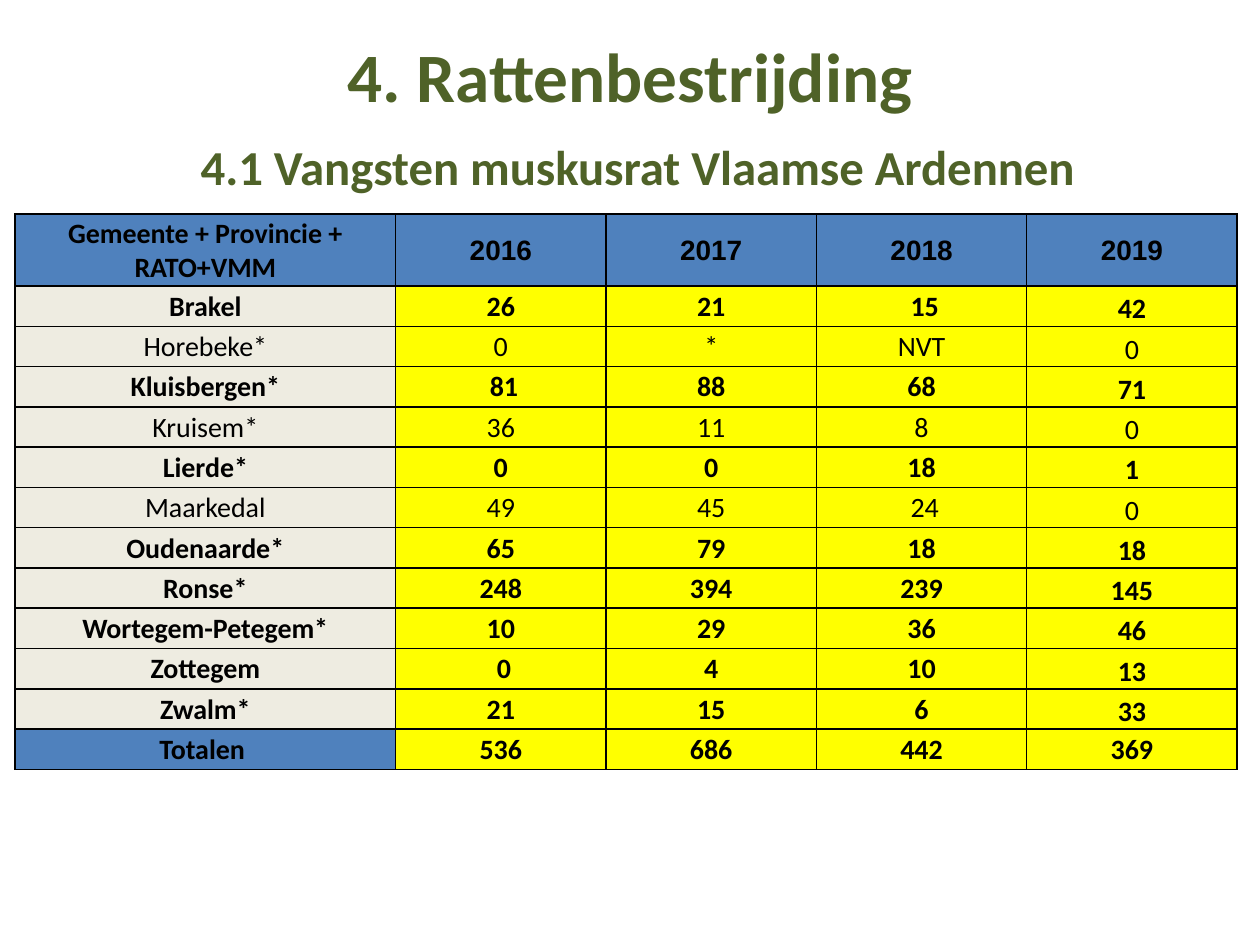
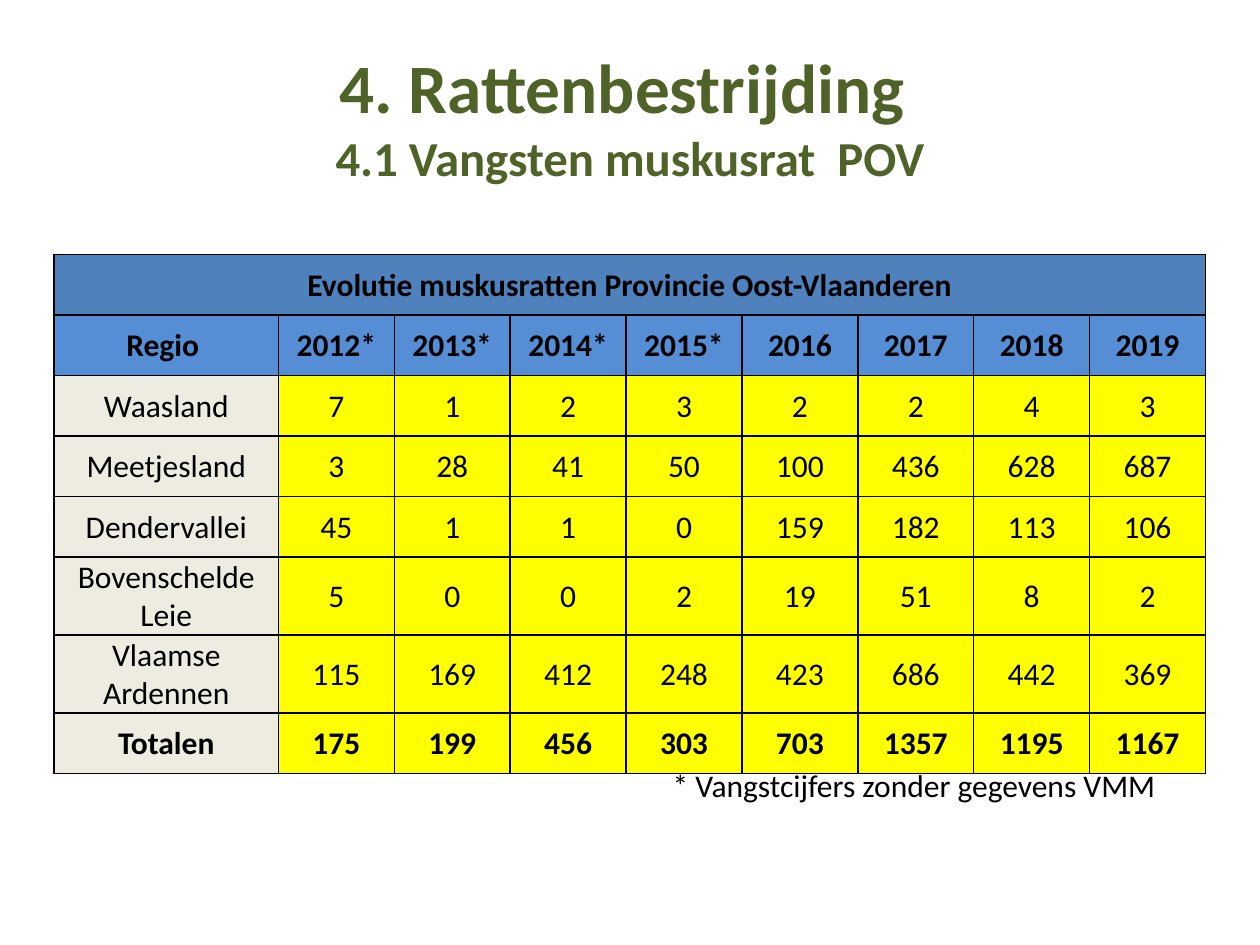
from dataclasses import dataclass

from lxml.etree import SubElement
from pptx import Presentation
from pptx.dml.color import RGBColor as RGB
from pptx.enum.text import MSO_ANCHOR as Anchor, MSO_AUTO_SIZE as AutoSize, PP_ALIGN as Align
from pptx.oxml.ns import qn
from pptx.util import Inches, Pt


@dataclass(frozen=True)
class Theme:
    font: str = "Calibri"
    year_font: str = "Arial"
    title: str = "4F6228"
    ink: str = "000000"
    header: str = "4F81BD"
    subheader: str = "558ED5"
    label: str = "EEECE1"
    value: str = "FFFF00"
    title_size: float = 39.6
    subtitle_size: float = 27.9
    town_size: int = 16
    region_size: int = 18


class Report:
    """Holds the deck, its style and the current page."""

    def __init__(self, theme):
        self.theme = theme
        self.deck = Presentation()
        self.deck.slide_width, self.deck.slide_height = Inches(10), Inches(7.5)
        self.page = None

    def style(self, para, size, color, bold=False, font=None):
        para.font.name = font or self.theme.font
        para.font.size = Pt(size)
        para.font.bold = bold
        para.font.color.rgb = RGB.from_string(color)

    def add_page(self, title, subtitle, top):
        self.page = self.deck.slides.add_slide(self.deck.slide_layouts[5])
        box = self.page.shapes.title
        box.left, box.top, box.width, box.height = map(Inches, (0.5, top, 9, 1.25))
        frame = box.text_frame
        frame.auto_size = AutoSize.NONE
        frame.vertical_anchor = Anchor.MIDDLE
        para = frame.paragraphs[0]
        para.alignment = Align.CENTER
        self.style(para, self.theme.title_size, self.theme.title, bold=True)
        para.text = title
        span = para.add_run()
        span.text = subtitle
        span.font.size = Pt(self.theme.subtitle_size)

    def add_table(self, left, top, widths, heights):
        frame = self.page.shapes.add_table(
            len(heights), len(widths), Inches(left), Inches(top),
            Inches(sum(widths)), Inches(sum(heights)))
        table = frame.table
        table.first_row = table.horz_banding = False
        for column, width in zip(table.columns, widths):
            column.width = Inches(width)
        for row, height in zip(table.rows, heights):
            row.height = Inches(height)
        for cell in table.iter_cells():
            self.add_borders(cell)
        return table

    def add_borders(self, cell):
        properties = cell._tc.get_or_add_tcPr()
        for side in ("lnL", "lnR", "lnT", "lnB"):
            line = SubElement(properties, qn(f"a:{side}"), w=str(Pt(1)))
            fill = SubElement(line, qn("a:solidFill"))
            SubElement(fill, qn("a:srgbClr"), val=self.theme.ink)

    def fill_cell(self, cell, text, size, fill, bold, font=None, anchor=Anchor.MIDDLE):
        cell.margin_left = cell.margin_right = cell.margin_top = Inches(0.01)
        cell.margin_bottom = 0
        cell.vertical_anchor = anchor
        cell.fill.solid()
        cell.fill.fore_color.rgb = RGB.from_string(fill)
        para = cell.text_frame.paragraphs[0]
        para.alignment = Align.CENTER
        self.style(para, size, self.theme.ink, bold, font)
        para.text = str(text)

    def add_note(self, text, left, top, width, height):
        box = self.page.shapes.add_textbox(*map(Inches, (left, top, width, height)))
        box.text_frame.word_wrap = False
        box.text_frame.auto_size = AutoSize.SHAPE_TO_FIT_TEXT
        para = box.text_frame.paragraphs[0]
        self.style(para, self.theme.region_size, self.theme.ink)
        para.text = text


TOWNS = [
    ("Gemeente + Provincie + RATO+VMM", 2016, 2017, 2018, 2019),
    ("Brakel", 26, 21, " 15", 42),
    ("Horebeke*", 0, "*", "NVT", 0),
    ("Kluisbergen*", " 81", 88, 68, 71),
    ("Kruisem*", 36, 11, 8, 0),
    ("Lierde*", 0, 0, 18, 1),
    ("Maarkedal", 49, 45, " 24", 0),
    ("Oudenaarde*", 65, 79, 18, 18),
    ("Ronse*", 248, 394, 239, 145),
    ("Wortegem-Petegem*", 10, 29, 36, 46),
    ("Zottegem", " 0", 4, 10, 13),
    ("Zwalm*", 21, 15, 6, 33),
    ("Totalen ", 536, 686, 442, 369),
]
PLAIN_TOWNS = {"Horebeke*", "Kruisem*", "Maarkedal"}

REGIONS = [
    ("Regio ", "2012*", "2013*", "2014*", "2015*", 2016, 2017, 2018, 2019),
    ("Waasland", 7, 1, 2, 3, 2, 2, 4, 3),
    ("Meetjesland", 3, 28, 41, 50, 100, 436, 628, 687),
    ("Dendervallei", 45, 1, 1, 0, 159, 182, 113, 106),
    ("Bovenschelde Leie", 5, 0, 0, 2, 19, 51, 8, 2),
    ("Vlaamse Ardennen", 115, 169, 412, 248, 423, 686, 442, 369),
    ("Totalen", 175, 199, 456, 303, 703, 1357, 1195, 1167),
]


def add_town_page(report):
    theme = report.theme
    report.add_page("4. Rattenbestrijding\v ", "4.1 Vangsten muskusrat Vlaamse Ardennen", 0.3)
    table = report.add_table(0.12, 1.7, [3.02] + [1.67] * 4, [0.57] + [0.32] * 12)
    last_row, last_column = len(TOWNS) - 1, len(TOWNS[0]) - 1
    for r, record in enumerate(TOWNS):
        for c, text in enumerate(record):
            is_header = r == 0 or (r == last_row and c == 0)
            fill = theme.header if is_header else theme.value if c else theme.label
            font = theme.year_font if r == 0 and c else theme.font
            # The newest year sits at the foot of its cells
            low = c == last_column and 0 < r < last_row
            report.fill_cell(table.cell(r, c), text, theme.town_size, fill,
                             record[0] not in PLAIN_TOWNS, font,
                             Anchor.BOTTOM if low else Anchor.MIDDLE)


def add_region_page(report):
    theme = report.theme
    report.add_page("4. Rattenbestrijding \v", "4.1 Vangsten muskusrat  POV", 0.29)
    # Rows with a two-line region name are taller
    heights = [0.48] * 5 + [0.62] * 2 + [0.48]
    table = report.add_table(0.43, 2.02, [1.78] + [0.92] * 8, heights)

    # Heading across all columns
    heading = table.cell(0, 0)
    heading.merge(table.cell(0, len(REGIONS[0]) - 1))
    report.fill_cell(heading, "Evolutie muskusratten Provincie Oost-Vlaanderen",
                     theme.region_size, theme.header, True)

    # Years, regions and totals
    for r, record in enumerate(REGIONS):
        for c, text in enumerate(record):
            fill = theme.subheader if r == 0 else theme.value if c else theme.label
            report.fill_cell(table.cell(r + 1, c), text, theme.region_size, fill,
                             r in (0, len(REGIONS) - 1))
    report.add_note("* Vangstcijfers zonder gegevens VMM", 5.24, 6.03, 4.2, 0.4)


def main():
    report = Report(Theme())
    add_town_page(report)
    add_region_page(report)
    report.deck.save("out.pptx")


if __name__ == "__main__":
    main()
